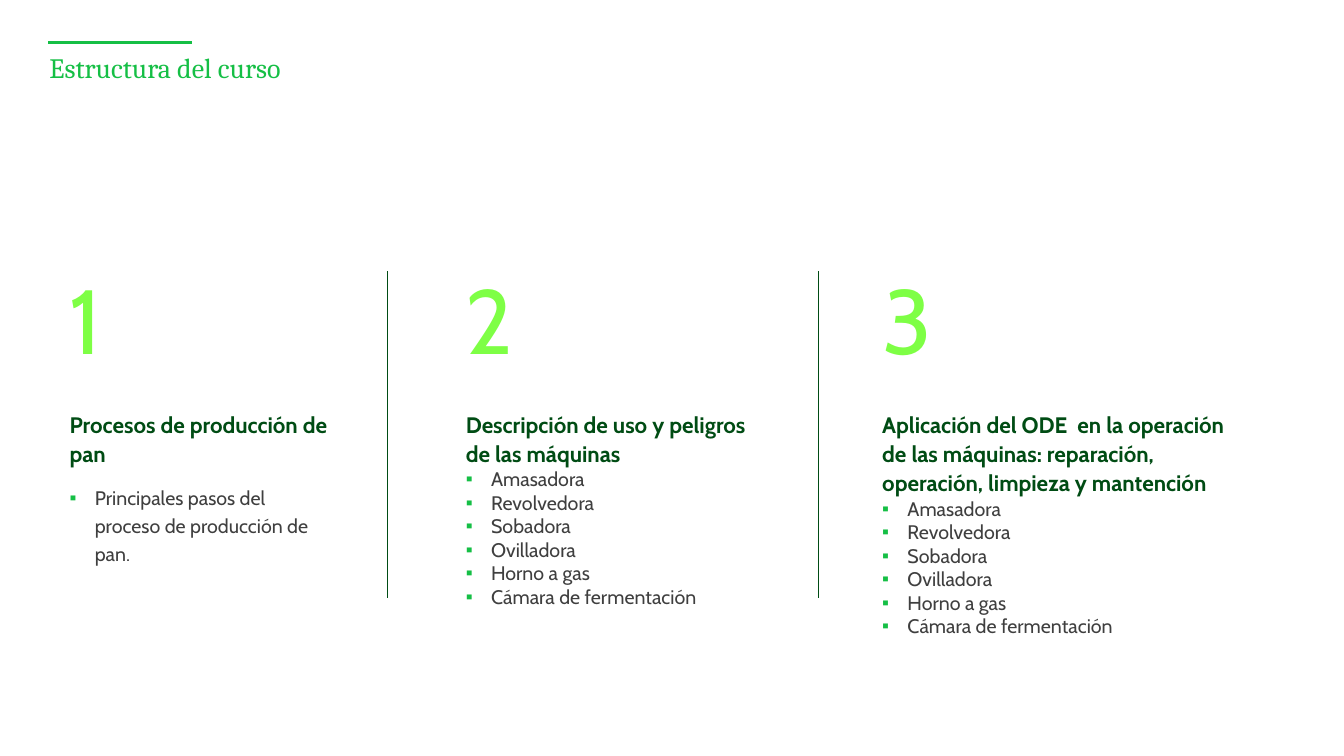
from lxml import etree
from pptx import Presentation
from pptx.dml.color import RGBColor
from pptx.enum.shapes import MSO_CONNECTOR
from pptx.enum.text import MSO_ANCHOR, MSO_AUTO_SIZE, PP_ALIGN
from pptx.oxml.ns import qn
from pptx.util import Inches, Pt

STRAIGHT = MSO_CONNECTOR.STRAIGHT
TOP = MSO_ANCHOR.TOP
LEFT = PP_ALIGN.LEFT
NO_AUTOFIT = MSO_AUTO_SIZE.NONE

COLORS = {
    "background": "FFFFFF",
    "accent": "15BF45",
    "number": "7EFF45",
    "heading": "004C14",
    "body": "3F3F3F",
}
SLIDE_W, SLIDE_H = 13.33, 7.5
COMPARISON_LAYOUT = 3 + 1
NUMBER_TOP, NUMBER_H = 2.69, 0.96
DETAILS_TOP = 4
DIVIDER_BOTTOM = 5.93
DIVIDERS = (3.84, 8.12)
BULLET_INDENT = 0.25

MACHINES = ["Amasadora", "Revolvedora", "Sobadora", "Ovilladora",
            "Horno a gas", "Cámara de fermentación"]
# left, width, height, heading, items, item paragraph format
MODULES = [
    (0.59, 2.8, 0.87, "Procesos de producción de pan",
     ["Principales pasos del proceso de producción de pan."],
     {"line_spacing": Pt(20), "before": 10}),
    (4.52, 3.16, 3.25, "Descripción de uso y peligros de las máquinas",
     MACHINES, {}),
    (8.65, 3.84, 2.43,
     "Aplicación del ODE  en la operación de las máquinas: "
     "reparación, operación, limpieza y mantención",
     MACHINES, {}),
]


def rgb(name):
    return RGBColor.from_string(COLORS[name])


def place(shape, left, top, width, height):
    shape.left, shape.top = Inches(left), Inches(top)
    shape.width, shape.height = Inches(width), Inches(height)


def prepare_frame(shape, inset=None):
    frame = shape.text_frame
    frame.word_wrap = True
    frame.auto_size = NO_AUTOFIT
    frame.vertical_anchor = TOP
    if inset is not None:
        frame.margin_left = frame.margin_right = Inches(inset)
        frame.margin_top = frame.margin_bottom = Inches(inset)
    return frame


def set_bullet(paragraph, bullet):
    """Give the paragraph a coloured bullet, or clear an inherited one."""
    properties = paragraph._p.get_or_add_pPr()
    indent = Inches(BULLET_INDENT) if bullet else 0
    properties.set("marL", str(indent))
    properties.set("indent", str(-indent))
    if bullet:
        color = etree.SubElement(properties, qn("a:buClr"))
        etree.SubElement(color, qn("a:srgbClr"), val=COLORS["accent"])
        etree.SubElement(properties, qn("a:buChar"), char="▪")
    else:
        etree.SubElement(properties, qn("a:buNone"))


def write(paragraph, text, *, size, color, font="Cabin", bold=False,
          line_spacing=1.0, before=0, bullet=False):
    set_bullet(paragraph, bullet)
    paragraph.alignment = LEFT
    paragraph.line_spacing = line_spacing
    paragraph.space_before = Pt(before)
    paragraph.space_after = Pt(0)
    run = paragraph.add_run()
    run.text = text
    run.font.name = font
    run.font.size = Pt(size)
    run.font.bold = bold
    run.font.color.rgb = rgb(color)


def add_rule(slide, start, end, color, weight):
    rule = slide.shapes.add_connector(
        STRAIGHT, *(Inches(value) for value in (*start, *end)))
    rule.line.color.rgb = rgb(color)
    rule.line.width = Pt(weight)
    etree.SubElement(rule._element.spPr, qn("a:effectLst"))


def add_header(slide, left, top, width, height):
    add_rule(slide, (left - 0.01, top - 0.12), (left + 1.41, top - 0.12),
             "accent", 1.75)
    title = slide.shapes.title
    place(title, left, top, width, height)
    write(prepare_frame(title, inset=0).paragraphs[0], "Estructura del curso",
          size=20, color="accent", font="Cambria", line_spacing=0.9)


def add_module(slide, details, number, left, width, height, heading, items,
               item_format):
    number_box = slide.shapes.add_textbox(
        Inches(left), Inches(NUMBER_TOP), Inches(width * 0.6), Inches(NUMBER_H))
    write(prepare_frame(number_box).paragraphs[0], str(number),
          size=65, color="number", line_spacing=0.9)

    place(details, left, DETAILS_TOP, width, height)
    frame = prepare_frame(details)
    write(frame.paragraphs[0], heading, size=16, color="heading", bold=True,
          line_spacing=Pt(21))
    for item in items:
        write(frame.add_paragraph(), item, size=14, color="body", bullet=True,
              **item_format)


def build_course_structure(presentation):
    slide = presentation.slides.add_slide(
        presentation.slide_layouts[COMPARISON_LAYOUT])
    slide.background.fill.solid()
    slide.background.fill.fore_color.rgb = rgb("background")

    add_header(slide, 0.49, 0.54, 10.79, 0.57)
    bodies = [shape for shape in slide.placeholders
              if shape.placeholder_format.idx > 0]
    for number, (details, module) in enumerate(zip(bodies, MODULES), start=1):
        add_module(slide, details, number, *module)
    for unused in bodies[len(MODULES):]:
        unused._element.getparent().remove(unused._element)
    for x in DIVIDERS:
        add_rule(slide, (x, NUMBER_TOP), (x, DIVIDER_BOTTOM), "heading", 0.75)


def main():
    presentation = Presentation()
    presentation.slide_width = Inches(SLIDE_W)
    presentation.slide_height = Inches(SLIDE_H)
    build_course_structure(presentation)
    presentation.save("out.pptx")


if __name__ == "__main__":
    main()
